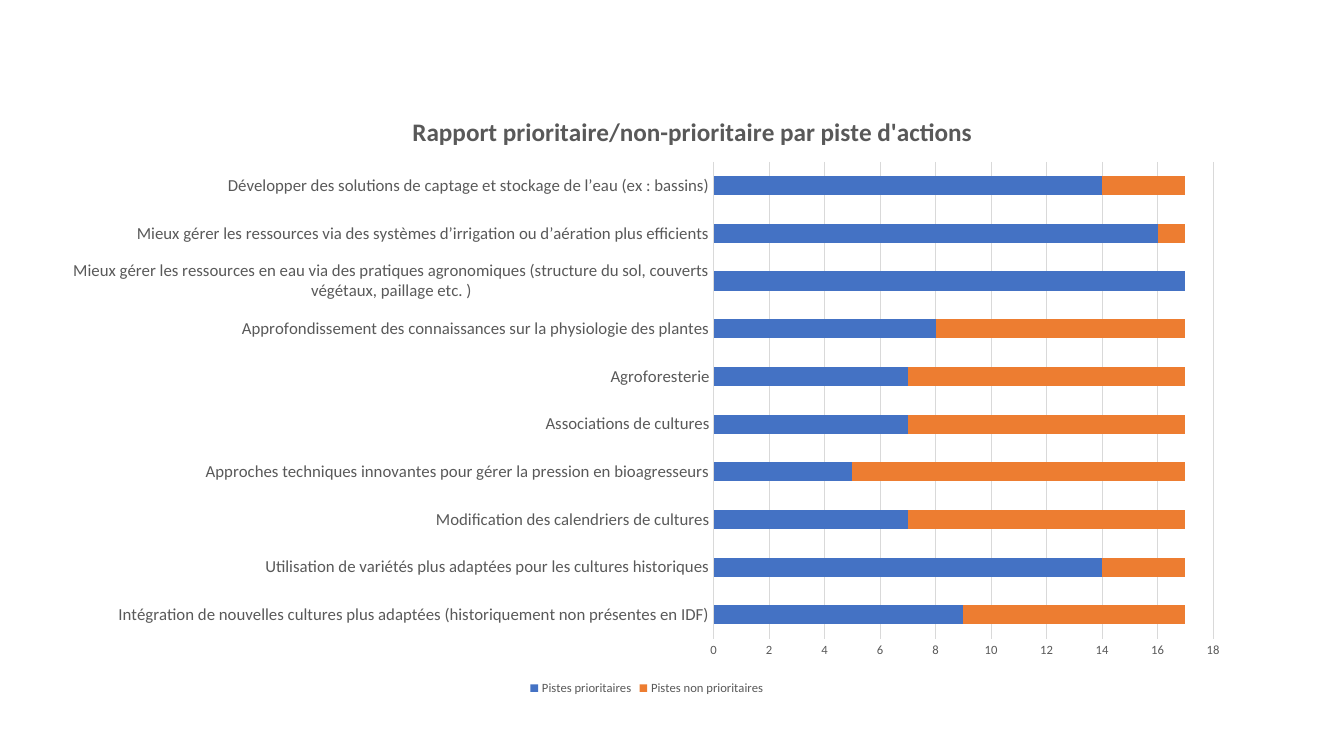
import dataclasses

import pptx
import pptx.chart.data
import pptx.dml.color
import pptx.enum.chart
import pptx.oxml
import pptx.oxml.ns
import pptx.util

Inches = pptx.util.Inches
qn = pptx.oxml.ns.qn


@dataclasses.dataclass
class Theme:
    font: str = "Calibri"
    text: str = "595959"
    grid: str = "D9D9D9"
    series: tuple = ("4472C4", "ED7D31")
    title_size: int = 18
    category_size: int = 12
    small_size: int = 9
    line_width: float = 0.75


ACTIONS = [
    ("Intégration de nouvelles cultures plus adaptées (historiquement non présentes en IDF)", 9, 8),
    ("Utilisation de variétés plus adaptées pour les cultures historiques", 14, 3),
    ("Modification des calendriers de cultures", 7, 10),
    ("Approches techniques innovantes pour gérer la pression en bioagresseurs", 5, 12),
    ("Associations de cultures", 7, 10),
    ("Agroforesterie", 7, 10),
    ("Approfondissement des connaissances sur la physiologie des plantes", 8, 9),
    ("Mieux gérer les ressources en eau via des pratiques agronomiques "
     "(structure du sol, couverts végétaux, paillage etc. )", 17, None),
    ("Mieux gérer les ressources via des systèmes d’irrigation ou d’aération plus efficients", 16, 1),
    ("Développer des solutions de captage et stockage de l’eau (ex : bassins)", 14, 3),
]
SERIES = ("Pistes prioritaires", "Pistes non prioritaires")


class SlideBuilder:
    def __init__(self, prs, theme):
        self.theme = theme
        self.s = prs.slides.add_slide(prs.slide_layouts[6])

    def apply(self, target, values):
        for name, value in values.items():
            setattr(target, name, value)

    def font(self, font, size, bold=False):
        self.apply(font, {"name": self.theme.font, "size": pptx.util.Pt(size), "bold": bold})
        font.color.rgb = pptx.dml.color.RGBColor.from_string(self.theme.text)

    def line(self, line):
        line.color.rgb = pptx.dml.color.RGBColor.from_string(self.theme.grid)
        line.width = pptx.util.Pt(self.theme.line_width)

    def layout(self, parent, index, places, inner=False):
        for old in parent.findall(qn("c:layout")):
            parent.remove(old)
        target = '<c:layoutTarget val="inner"/>' if inner else ""
        modes = "".join(f'<c:{k}Mode val="edge"/>' for k in "xy")
        values = "".join(f'<c:{k} val="{v}"/>' for k, v in places.items())
        parent.insert(index, pptx.oxml.parse_xml(
            f'<c:layout {pptx.oxml.ns.nsdecls("c")}><c:manualLayout>'
            f'{target}{modes}{values}</c:manualLayout></c:layout>'))

    def title(self, chart, text):
        chart.has_title = True
        tf = chart.chart_title.text_frame
        r = tf.paragraphs[0].add_run()
        r.text = text
        self.font(r.font, self.theme.title_size, True)
        self.layout(chart._chartSpace.chart.find(qn("c:title")), 1, {"x": 0.3, "y": 0.04})

    def axes(self, chart):
        none = pptx.enum.chart.XL_TICK_MARK.NONE
        for axis, size in ((chart.category_axis, self.theme.category_size),
                           (chart.value_axis, self.theme.small_size)):
            self.apply(axis, {"major_tick_mark": none, "minor_tick_mark": none})
            self.font(axis.tick_labels.font, size)
        self.line(chart.category_axis.format.line)
        axis = chart.value_axis
        self.apply(axis, {"minimum_scale": 0, "maximum_scale": 18, "major_unit": 2})
        axis.format.line.fill.background()
        self.line(axis.major_gridlines.format.line)

    def legend(self, chart):
        chart.has_legend = True
        self.apply(chart.legend, {
            "position": pptx.enum.chart.XL_LEGEND_POSITION.BOTTOM, "include_in_layout": False})
        self.font(chart.legend.font, self.theme.small_size)

    def stacked_bars(self, title, rows, names, box):
        data = pptx.chart.data.CategoryChartData()
        categories, *columns = zip(*rows)
        data.categories = categories
        for name, values in zip(names, columns):
            data.add_series(name, values)
        kind = pptx.enum.chart.XL_CHART_TYPE.BAR_STACKED
        chart = self.s.shapes.add_chart(kind, *map(Inches, box), data).chart
        self.font(chart.font, self.theme.small_size)
        plot = chart.plots[0]
        self.apply(plot, {"gap_width": 150, "overlap": 100, "vary_by_categories": False})
        for series, color in zip(plot.series, self.theme.series):
            series.format.fill.solid()
            series.format.fill.fore_color.rgb = pptx.dml.color.RGBColor.from_string(color)
        self.title(chart, title)
        self.axes(chart)
        self.legend(chart)
        self.layout(chart._chartSpace.chart.plotArea, 0,
                    {"x": 0.556, "y": 0.124, "w": 0.418, "h": 0.777}, inner=True)


def main():
    prs = pptx.Presentation()
    prs.slide_width, prs.slide_height = Inches(13.33), Inches(7.5)
    slide = SlideBuilder(prs, Theme())
    slide.stacked_bars("Rapport prioritaire/non-prioritaire par piste d'actions",
                       ACTIONS, SERIES, (0.49, 0.85, 11.85, 6.09))
    prs.save("out.pptx")


if __name__ == "__main__":
    main()
